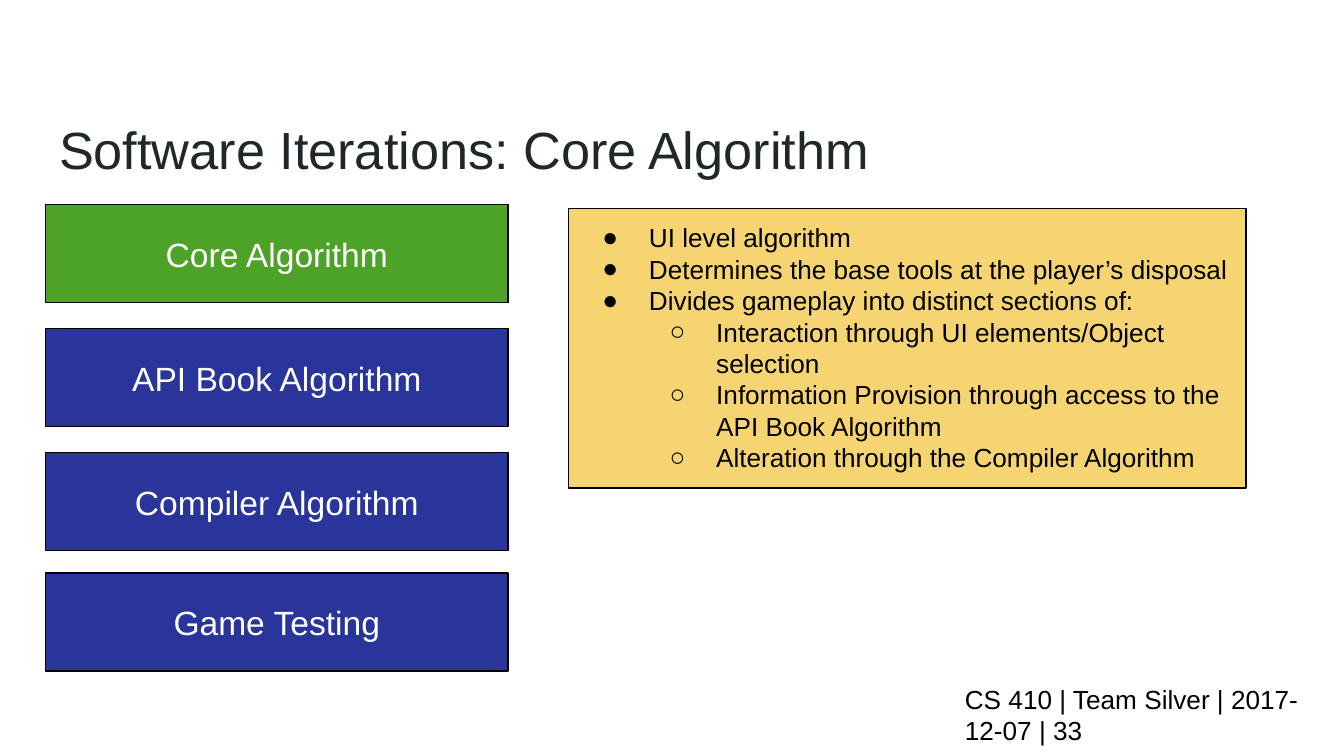
from lxml.etree import SubElement
from pptx import Presentation
from pptx.dml.color import RGBColor
from pptx.enum.shapes import MSO_SHAPE
from pptx.enum.text import MSO_ANCHOR, MSO_AUTO_SIZE, PP_ALIGN
from pptx.oxml.ns import qn
from pptx.util import Pt

COLORS = {
    "title": "202729",
    "black": "000000",
    "white": "FFFFFF",
    "current": "4DA328",
    "other": "29359B",
    "details": "F1C232",
}
FONT = "Arial"
INSET = 7.2

TITLE = "Software Iterations: Core Algorithm"
FOOTER = "CS 410 | Team Silver | 2017-12-07 | 33"
# label, fill, top
ITERATIONS = [
    ("Core Algorithm", "current", 109.6),
    ("API Book Algorithm", "other", 176.1),
    ("Compiler Algorithm", "other", 242.5),
    ("Game Testing", "other", 307),
]
# level, text
DETAILS = [
    (0, "UI level algorithm"),
    (0, "Determines the base tools at the player’s disposal"),
    (0, "Divides gameplay into distinct sections of:"),
    (1, "Interaction through UI elements/Object selection"),
    (1, "Information Provision through access to the API Book Algorithm"),
    (1, "Alteration through the Compiler Algorithm"),
]
BULLETS = "●○"
BULLET_INDENT = 36
BULLET_HANG = 25

TITLE_BOX = (24.5, 43.9, 493.9, 59.8)
FOOTER_BOX = (509.8, 367.2, 200.2, 31)
DETAILS_BOX = (304.6, 111.6, 362.9, 149.8)
ITERATION_LEFT, ITERATION_WIDTH, ITERATION_HEIGHT = 24.5, 247.7, 52.6


def rgb(name):
    return RGBColor.from_string(COLORS[name])


def set_text(shape, text, size, color, anchor, alignment=PP_ALIGN.LEFT):
    frame = shape.text_frame
    frame.text = text
    frame.word_wrap = True
    frame.auto_size = MSO_AUTO_SIZE.NONE
    frame.vertical_anchor = anchor
    frame.margin_left = frame.margin_right = Pt(INSET)
    frame.margin_top = frame.margin_bottom = Pt(INSET)
    for paragraph in frame.paragraphs:
        paragraph.alignment = alignment
        for run in paragraph.runs:
            run.font.size = Pt(size)
            run.font.name = FONT
            run.font.color.rgb = rgb(color)


def add_box(slide, box, fill):
    shape = slide.shapes.add_shape(MSO_SHAPE.RECTANGLE, *map(Pt, box))
    shape.shadow.inherit = False
    shape.fill.solid()
    shape.fill.fore_color.rgb = rgb(fill)
    shape.line.color.rgb = rgb("black")
    shape.line.width = Pt(0.75)
    return shape


def set_opacity(shape, percent):
    color = shape.fill._xPr.find(qn("a:solidFill"))[0]
    SubElement(color, qn("a:alpha"), val=str(percent * 1000))


def add_bullet(paragraph, level):
    paragraph.level = level
    properties = paragraph._p.get_or_add_pPr()
    properties.set("marL", str(Pt(BULLET_INDENT * (level + 1))))
    properties.set("indent", str(-Pt(BULLET_HANG)))
    SubElement(properties, qn("a:buFont"), typeface=FONT)
    SubElement(properties, qn("a:buChar"), char=BULLETS[level])


def main():
    presentation = Presentation()
    presentation.slide_width, presentation.slide_height = Pt(720), Pt(405)
    slide = presentation.slides.add_slide(presentation.slide_layouts[5])

    title = slide.shapes.title
    title.left, title.top, title.width, title.height = map(Pt, TITLE_BOX)
    set_text(title, TITLE, 28, "title", MSO_ANCHOR.BOTTOM)

    footer = slide.shapes.add_textbox(*map(Pt, FOOTER_BOX))
    set_text(footer, FOOTER, 14, "black", MSO_ANCHOR.MIDDLE)

    for label, fill, top in ITERATIONS:
        box = (ITERATION_LEFT, top, ITERATION_WIDTH, ITERATION_HEIGHT)
        iteration = add_box(slide, box, fill)
        set_text(iteration, label, 18, "white", MSO_ANCHOR.MIDDLE, PP_ALIGN.CENTER)

    details = add_box(slide, DETAILS_BOX, "details")
    set_opacity(details, 69)
    text = "\n".join(line for _, line in DETAILS)
    set_text(details, text, 14, "black", MSO_ANCHOR.TOP)
    for paragraph, (level, _) in zip(details.text_frame.paragraphs, DETAILS):
        add_bullet(paragraph, level)

    presentation.save("out.pptx")


if __name__ == "__main__":
    main()
